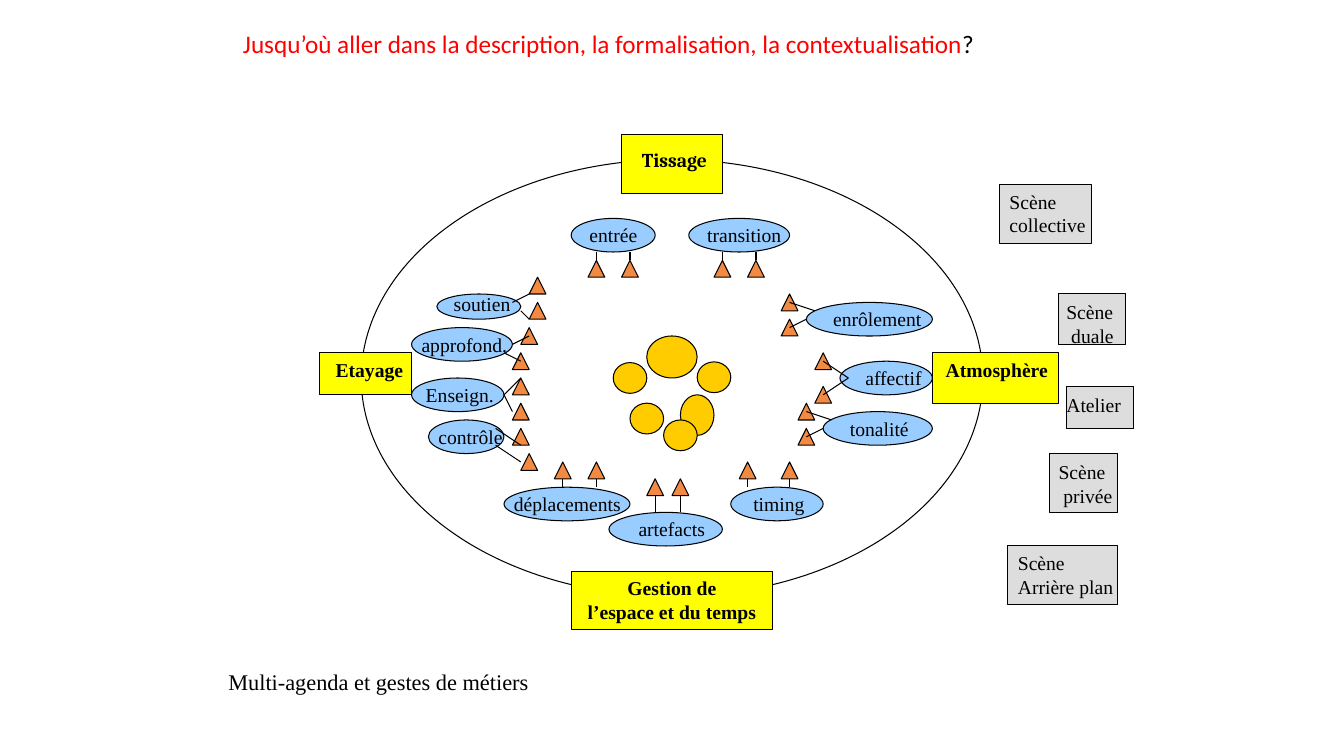
from pptx import Presentation
from pptx.dml.color import RGBColor
from pptx.enum import shapes, text
from pptx.oxml import parse_xml
from pptx.oxml import ns
from pptx.util import Pt

COLOURS = {"ink": "000000", "title": "FF0000", "scene": "DDDDDD", "theme": "99CCFF",
           "pole": "FFFF00", "actor": "F38A43", "pupil": "FFCC00"}
KINDS = shapes.MSO_SHAPE
SERIF = "Times New Roman"
ACTOR_SIZE = 12
# Where a link touches a triangle, measured from its upper left
ANCHORS = {"apex": (6, 0), "centre": (6, 6), "base": (6, 12), "corner": (0, 12), "left": (0, 6)}

# Name, oval (x, y, w, h), label (dx, dy, width),
# two actors (x, y, anchor, x and y of the link's end at the oval)
THEMES = [
    ("entrée", (150, 42, 60, 24), (6, 0, 56),
     [(162, 72, "apex", 168, 66), (186, 72, "apex", 192, 66)]),
    ("transition", (234, 42, 72, 24), (6, 0, 74),
     [(252, 72, "apex", 258, 66), (276, 72, "apex", 282, 66)]),
    ("enrôlement", (318, 102, 90, 24), (12, 0, 84),
     [(300, 96, "centre", 324, 108), (300, 114, "centre", 318, 114)]),
    ("affectif", (342, 144, 66, 24), (11, 0, 62),
     [(324, 138, "centre", 348, 156), (324, 162, "centre", 348, 156)]),
    ("tonalité", (330, 180, 78, 24), (12, 0, 64),
     [(312, 174, "centre", 336, 186), (312, 192, "centre", 330, 192)]),
    ("timing", (264, 234, 66, 24), (9, 0, 58),
     [(270, 216, "base", 276, 234), (300, 216, "base", 306, 234)]),
    ("artefacts", (177, 252, 81, 24), (14, 0, 68),
     [(204, 228, "base", 210, 252), (222, 228, "base", 228, 252)]),
    ("déplacements", (102, 234, 90, 24), (0, 0, 98),
     [(138, 216, "base", 144, 234), (162, 216, "base", 168, 234)]),
    ("contrôle", (48, 186, 54, 24), (0, 0, 68),
     [(108, 192, "base", 96, 192), (114, 210, "left", 96, 204)]),
    ("Enseign.", (36, 156, 66, 24), (3, 0, 70),
     [(108, 156, "apex", 102, 168), (108, 174, "left", 102, 168)]),
    ("approfond.", (36, 120, 72, 24), (0, 0, 84),
     [(114, 120, "centre", 108, 132), (108, 138, "centre", 102, 138)]),
    ("soutien", (54, 96, 60, 18), (5, -5, 62),
     [(120, 84, "corner", 108, 102), (120, 102, "corner", 114, 108)]),
]

# Lines, rectangle (x, y, w, h), label (dx, dy, width), font, alignment
CENTRE, LEFT = text.PP_ALIGN.CENTER, text.PP_ALIGN.LEFT
POLES = [
    (["Tissage"], (186, -18, 72, 42), (0, 6, 75.6), "Cambria", CENTRE),
    (["Atmosphère"], (408, 138, 90, 36), (2.4, 0, 96), SERIF, LEFT),
    (["Gestion de", "l’espace et du temps"], (150, 294, 144, 42), (0, 0, 144), SERIF, CENTRE),
    (["Etayage"], (-30, 138, 66, 30), (4.6, 0, 70), SERIF, LEFT),
]

SCENES = [
    (["Scène", "collective"], (0, 0, 66, 42), (0, 0, 78)),
    (["Scène", " duale"], (42, 78, 48, 36), (-1.4, 1, 56)),
    (["Atelier"], (48, 144, 48, 30), (-7.4, 1, 62)),
    (["Scène", " privée"], (36, 192, 48, 42), (-1, 1, 60)),
    (["Scène", "Arrière plan"], (6, 258, 78, 42), (0, 0, 92)),
]

PUPILS = [(0, 19, 24, 22), (24, 0, 36, 30), (60, 18.5, 24, 22),
          (48, 42, 24, 29), (36, 60, 24, 22), (12, 48, 24, 22)]


def colour(name):
    return RGBColor.from_string(COLOURS[name])


def place(box, part):
    """Shift a part given relative to the box's upper left corner."""
    return (box[0] + part[0], box[1] + part[1], *part[2:])


def add_outlined(page, kind, box, fill=None):
    shape = page.shapes.add_shape(kind, *map(Pt, box))
    shape.shadow.inherit = False
    if fill:
        shape.fill.solid()
        shape.fill.fore_color.rgb = colour(fill)
    else:
        shape.fill.background()
    shape.line.color.rgb = colour("ink")
    shape.line.width = Pt(0.75)


def add_text(page, box, lines, size=14, font=SERIF, bold=False, align=LEFT):
    """Each line is a list of (wording, colour name) runs."""
    frame = page.shapes.add_textbox(*map(Pt, box)).text_frame
    frame.word_wrap = True
    frame.auto_size = text.MSO_AUTO_SIZE.SHAPE_TO_FIT_TEXT
    for index, runs in enumerate(lines):
        para = frame.add_paragraph() if index else frame.paragraphs[0]
        para.alignment = align
        for wording, ink in runs:
            span = para.add_run()
            span.text = wording
            span.font.name = font
            span.font.size = Pt(size)
            span.font.bold = bold
            span.font.color.rgb = colour(ink)


def add_label(page, box, label, lines, **style):
    dx, dy, width = label
    height = 24 if len(lines) == 1 else 41
    add_text(page, place(box, (dx, dy, width, height)),
             [[(line, "ink")] for line in lines], **style)


def add_link(page, start, end):
    link = page.shapes.add_connector(shapes.MSO_CONNECTOR.STRAIGHT, *map(Pt, (*start, *end)))
    link.line.color.rgb = colour("ink")
    link.line.width = Pt(0.75)
    link._element.spPr.append(parse_xml(f"<a:effectLst {ns.nsdecls('a')}/>"))


def draw_theme(page, box, name, oval, label, actors):
    """An oval with its name and the two triangles linked to it."""
    oval = place(box, oval)
    add_outlined(page, KINDS.OVAL, oval, "theme")
    add_label(page, oval, label, [name])
    for x, y, anchor, end_x, end_y in actors:
        actor = place(box, (x, y, ACTOR_SIZE, ACTOR_SIZE))
        add_outlined(page, KINDS.ISOSCELES_TRIANGLE, actor, "actor")
        add_link(page, place(box, (end_x, end_y)), place(actor[:2], ANCHORS[anchor]))


def draw_ring(page, box):
    """The large ellipse with its themes inside and four poles on its edge."""
    add_outlined(page, KINDS.OVAL, box)
    for theme in THEMES:
        draw_theme(page, box, *theme)
    for lines, rect, label, font, align in POLES:
        rect = place(box, rect)
        add_outlined(page, KINDS.RECTANGLE, rect, "pole")
        add_label(page, rect, label, lines, font=font, bold=True, align=align)


def draw_pupils(page, box):
    for pupil in PUPILS:
        add_outlined(page, KINDS.OVAL, place(box, pupil), "pupil")


def draw_scenes(page, box):
    for lines, rect, label in SCENES:
        rect = place(box, rect)
        add_outlined(page, KINDS.RECTANGLE, rect, "scene")
        add_label(page, rect, label, lines)


def main():
    deck = Presentation()
    deck.slide_width, deck.slide_height = Pt(960), Pt(540)
    page = deck.slides.add_slide(deck.slide_layouts[6])
    draw_scenes(page, (714, 132))
    draw_ring(page, (258, 114, 444, 312))
    draw_pupils(page, (438, 240))
    add_text(page, (156, 474, 240, 27), [[("Multi-agenda et gestes de métiers", "ink")]], size=16)
    question = "Jusqu’où aller dans la description, la formalisation, la contextualisation"
    add_text(page, (166.5, 16.5, 556, 29), [[(question, "title"), ("?", "ink")]],
             size=18, font="Calibri")
    deck.save("out.pptx")


if __name__ == "__main__":
    main()
